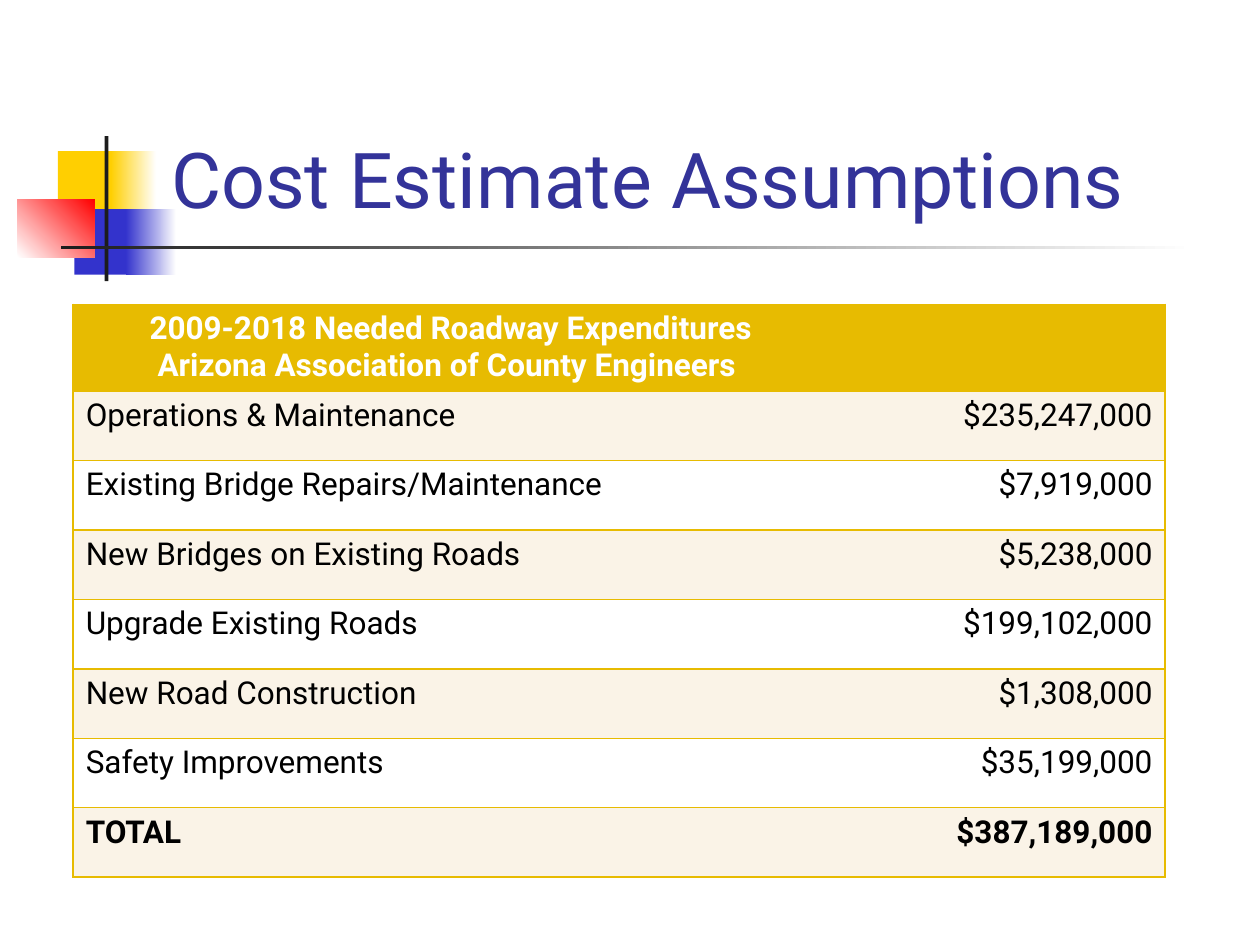
"""Build the slide of cost estimate assumptions with its expenditure table."""
from lxml import etree
from pptx import Presentation
from pptx import util as u
from pptx.dml.color import RGBColor
from pptx.enum import shapes, text
from pptx.oxml import ns

Pt = u.Pt
WHITE = RGBColor(255, 255, 255)
BLACK = RGBColor(0, 0, 0)
YELLOW = RGBColor(0xFF, 0xCF, 0x01)
BLUE = RGBColor(0x33, 0x33, 0xCC)
RED = RGBColor(0xFF, 0, 0)
DARK = RGBColor(0x1C, 0x1C, 0x1C)
NAVY = RGBColor(0x33, 0x33, 0x99)
GOLD = RGBColor(0xE7, 0xBB, 0x01)
CREAM = RGBColor(0xFA, 0xF3, 0xE7)
ALIGN = text.PP_ALIGN


def style(par, align, **form):
    par.alignment = align
    for key, val in form.items():
        setattr(par.font, key, val)
    par.font.fill.solid()
    par.font.color.rgb = form["color"] if "color" in form else BLACK


def edge(cell, side, color):
    line = etree.SubElement(cell._tc.get_or_add_tcPr(), ns.qn(f"a:ln{side}"), w=str(Pt(1)))
    if color is None:
        etree.SubElement(line, ns.qn("a:noFill"))
    else:
        fill = etree.SubElement(line, ns.qn("a:solidFill"))
        etree.SubElement(fill, ns.qn("a:srgbClr"), val=str(color))


deck = Presentation()
deck.slide_width, deck.slide_height = Pt(720), Pt(540)
slide = deck.slides.add_slide(deck.slide_layouts[5])

blocks = [
    (33.1, 86.4, 34.6, 37.4, YELLOW, None, 0),
    (63.4, 86.4, 25.9, 37.4, YELLOW, WHITE, 0),
    (42.5, 119.5, 33.1, 37.4, BLUE, None, 0),
    (72, 119.5, 28.8, 37.4, BLUE, WHITE, 0),
    (10.1, 113.8, 43.9, 33.1, WHITE, RED, 45),
    (59.8, 77.8, 2.2, 82.8, DARK, None, 0),
    (34.6, 140.4, 648, 2.2, DARK, WHITE, 0),
]
for left, top, width, height, first, last, angle in blocks:
    block = slide.shapes.add_shape(
        shapes.MSO_SHAPE.RECTANGLE, Pt(left), Pt(top), Pt(width), Pt(height))
    block.shadow.inherit = False
    block.line.fill.background()
    if last is None:
        block.fill.solid()
        block.fill.fore_color.rgb = first
    else:
        block.fill.gradient()
        block.fill.gradient_angle = angle
        for stop, color, place in zip(block.fill.gradient_stops, (first, last), (0, 1)):
            stop.color.rgb = color
            stop.position = place

title = slide.shapes.title
spot = {"left": 90.7, "top": 16.6, "width": 613.4, "height": 115.2}
for key, val in spot.items():
    setattr(title, key, Pt(val))
frame = title.text_frame
frame.text = "Cost Estimate Assumptions"
frame.auto_size = text.MSO_AUTO_SIZE.NONE
frame.vertical_anchor = text.MSO_ANCHOR.BOTTOM
par = frame.paragraphs[0]
par.alignment = ALIGN.LEFT
for key, val in {"name": "Roboto", "size": Pt(44)}.items():
    setattr(par.font, key, val)
par.font.color.rgb = NAVY

rows = [
    ("2009-2018 Needed Roadway Expenditures\nArizona Association of County Engineers ", ""),
    ("Operations & Maintenance", "$235,247,000"),
    ("Existing Bridge Repairs/Maintenance", "$7,919,000"),
    ("New Bridges on Existing Roads", "$5,238,000"),
    ("Upgrade Existing Roads", "$199,102,000"),
    ("New Road Construction", "$1,308,000"),
    ("Safety Improvements", "$35,199,000"),
    ("TOTAL", "$387,189,000"),
]
high = 39.7
table = slide.shapes.add_table(
    len(rows), 2, Pt(41.8), Pt(174), Pt(624), Pt(high * len(rows))).table
table.first_row = table.horz_banding = False
for col, width in zip(table.columns, (431.5, 192.5)):
    col.width = Pt(width)
for r, row in enumerate(rows):
    table.rows[r].height = Pt(high)
    head = r == 0
    form = {"name": "Roboto", "size": Pt(18), "bold": r in (0, len(rows) - 1)}
    for c, words in enumerate(row):
        cell = table.cell(r, c)
        outer = (GOLD, None) if c == 0 else (None, GOLD)
        for side, color in zip("LRTB", outer + (GOLD, GOLD)):
            edge(cell, side, color)
        cell.fill.solid()
        cell.fill.fore_color.rgb = GOLD if head else CREAM if r % 2 else WHITE
        cell.text = words
        for par in cell.text_frame.paragraphs:
            par.alignment = ALIGN.CENTER if head else ALIGN.RIGHT if c else ALIGN.LEFT
            for key, val in form.items():
                setattr(par.font, key, val)
            par.font.color.rgb = WHITE if head else BLACK

deck.save("out.pptx")
